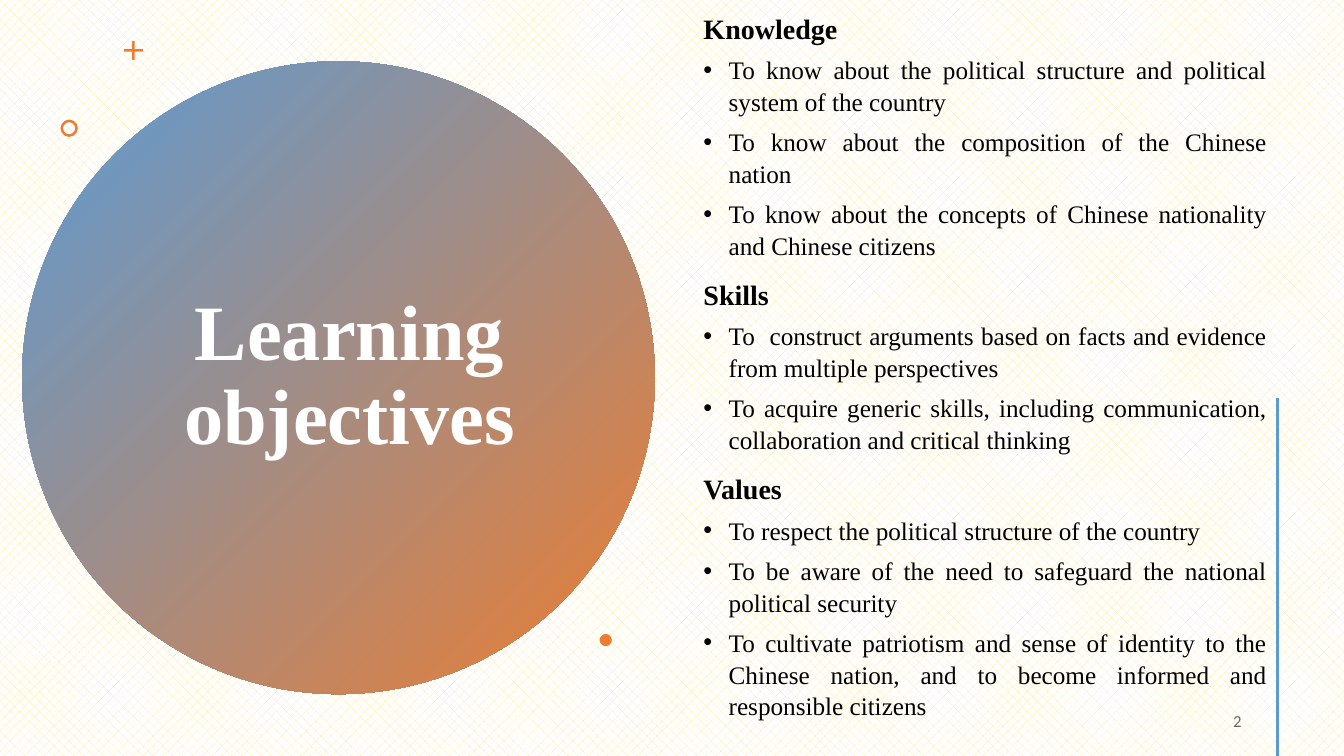
from dataclasses import dataclass

from lxml import etree
from pptx import Presentation
from pptx.dml.color import RGBColor
from pptx.enum.dml import MSO_PATTERN
from pptx.enum.shapes import MSO_CONNECTOR, MSO_SHAPE
from pptx.enum.text import MSO_ANCHOR, PP_ALIGN
from pptx.oxml.ns import qn
from pptx.util import Pt


@dataclass(frozen=True)
class Theme:
    blue: RGBColor = RGBColor(0x5B, 0x9B, 0xD5)
    orange: RGBColor = RGBColor(0xED, 0x7D, 0x31)
    cream: RGBColor = RGBColor(0xFF, 0xE6, 0x99)
    white: RGBColor = RGBColor(0xFF, 0xFF, 0xFF)
    black: RGBColor = RGBColor(0, 0, 0)
    grey: RGBColor = RGBColor(0x66, 0x66, 0x66)
    serif: str = "Times New Roman"
    sans: str = "Calibri"
    title: int = 56
    heading: int = 20
    body: int = 18
    number: int = 12


THEME = Theme()

OBJECTIVES = {
    "Knowledge": [
        "To know about the political structure and political system of the country",
        "To know about the composition of the Chinese nation",
        "To know about the concepts of Chinese nationality and Chinese citizens",
    ],
    "Skills": [
        "To  construct arguments based on facts and evidence from multiple perspectives",
        "To acquire generic skills, including communication, collaboration and critical thinking",
    ],
    "Values": [
        "To respect the political structure of the country",
        "To be aware of the need to safeguard the national political security",
        "To cultivate patriotism and sense of identity to the Chinese nation, "
        "and to become informed and responsible citizens",
    ],
}


def style(p, size, color, font=THEME.serif, bold=False):
    for r in p.runs:
        r.font.name, r.font.size, r.font.bold = font, Pt(size), bold
        r.font.color.rgb = color


def add_text_frame(s, x, y, w, h):
    tf = s.shapes.add_textbox(Pt(x), Pt(y), Pt(w), Pt(h)).text_frame
    tf.word_wrap = True
    tf.vertical_anchor = MSO_ANCHOR.MIDDLE
    return tf


def add_ornament(s, kind, x, y, size, adjustment=None):
    sp = s.shapes.add_shape(kind, Pt(x), Pt(y), Pt(size), Pt(size))
    sp.shadow.inherit = False
    sp.fill.solid()
    sp.fill.fore_color.rgb = THEME.orange
    sp.line.fill.background()
    if adjustment is not None:
        sp.adjustments[0] = adjustment


def add_bullet(p, indent):
    pPr = p._p.get_or_add_pPr()
    pPr.set("marL", str(Pt(indent)))
    pPr.set("indent", str(-Pt(indent)))
    etree.SubElement(pPr, qn("a:buFont")).set("typeface", "Arial")
    etree.SubElement(pPr, qn("a:buChar")).set("char", "•")


def add_background(s):
    fill = s.background.fill
    fill.patterned()
    fill.pattern = MSO_PATTERN.PERCENT_30
    fill.fore_color.rgb = THEME.cream
    fill.back_color.rgb = THEME.white


def add_title_circle(s, x, y, size):
    # Gradient disc
    sp = s.shapes.add_shape(MSO_SHAPE.OVAL, Pt(x), Pt(y), Pt(size), Pt(size))
    sp.shadow.inherit = False
    sp.line.fill.background()
    sp.fill.gradient()
    sp.fill.gradient_angle = 315
    for stop, color in zip(sp.fill.gradient_stops, (THEME.blue, THEME.orange)):
        stop.color.rgb = color

    # Title
    tf = add_text_frame(s, x + 82, y + 57.5, 304, 336)
    p = tf.paragraphs[0]
    p.text = "Learning objectives"
    p.alignment = PP_ALIGN.CENTER
    p.line_spacing = 0.9
    style(p, THEME.title, THEME.white, bold=True)

    # Plus, ring and dot around the disc
    add_ornament(s, MSO_SHAPE.CROSS, x + 72.7, y - 14.6, 13.6, 0.43)
    add_ornament(s, MSO_SHAPE.DONUT, x + 27.4, y + 41.6, 12.4, 0.15)
    add_ornament(s, MSO_SHAPE.OVAL, x + 412.5, y + 409, 8.8)


def add_objectives(s, x, y, w, h):
    tf = add_text_frame(s, x, y, w, h)
    items = [(text, is_heading)
             for heading, goals in OBJECTIVES.items()
             for text, is_heading in [(heading, True), *((g, False) for g in goals)]]
    for i, (text, is_heading) in enumerate(items):
        p = tf.add_paragraph() if i else tf.paragraphs[0]
        p.text = text
        p.alignment = PP_ALIGN.JUSTIFY
        p.space_after = Pt(6)
        if is_heading:
            p.space_before = Pt(6 if i else 0)
            style(p, THEME.heading, THEME.black, bold=True)
        else:
            p.line_spacing = 1.05
            add_bullet(p, 18)
            style(p, THEME.body, THEME.black)


def add_page_number(s, x, y, w, h):
    p = add_text_frame(s, x, y, w, h).paragraphs[0]
    p.text = "2"
    p.alignment = PP_ALIGN.RIGHT
    style(p, THEME.number, THEME.grey, THEME.sans)


def add_side_rule(s, x, top, bottom):
    rule = s.shapes.add_connector(MSO_CONNECTOR.STRAIGHT, Pt(x), Pt(top), Pt(x), Pt(bottom))
    rule.line.color.rgb = THEME.blue
    rule.line.width = Pt(2)
    etree.SubElement(rule._element.spPr, qn("a:effectLst"))


def main():
    prs = Presentation()
    prs.slide_width, prs.slide_height = Pt(960), Pt(540)
    s = prs.slides.add_slide(prs.slide_layouts[6])
    add_background(s)
    add_title_circle(s, 15.8, 43.8, 452)
    add_objectives(s, 495.4, 21.6, 416.6, 479.6)
    add_page_number(s, 678, 500.5, 216, 28.8)
    add_side_rule(s, 912.4, 284, 540)
    prs.save("out.pptx")


if __name__ == "__main__":
    main()
